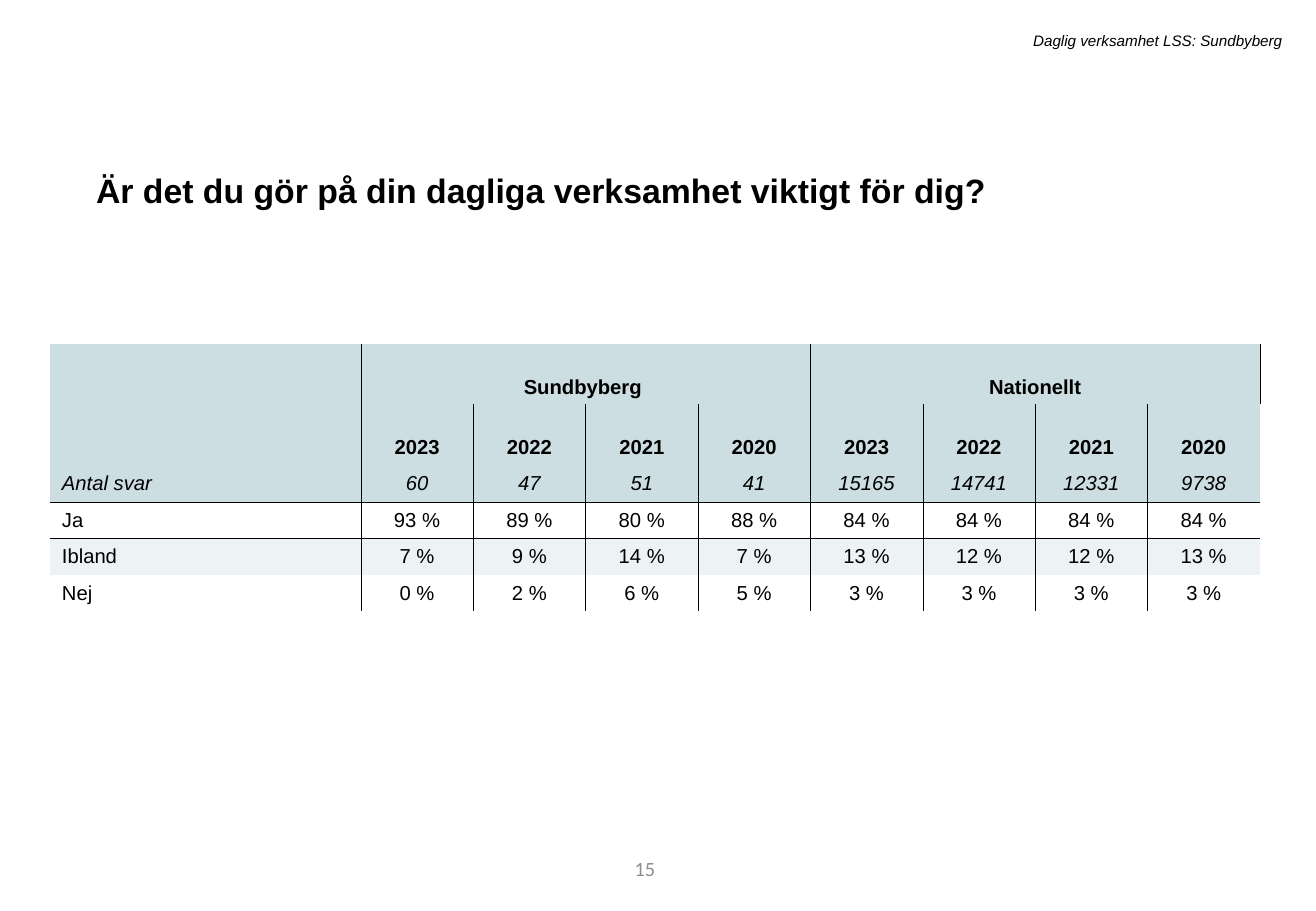
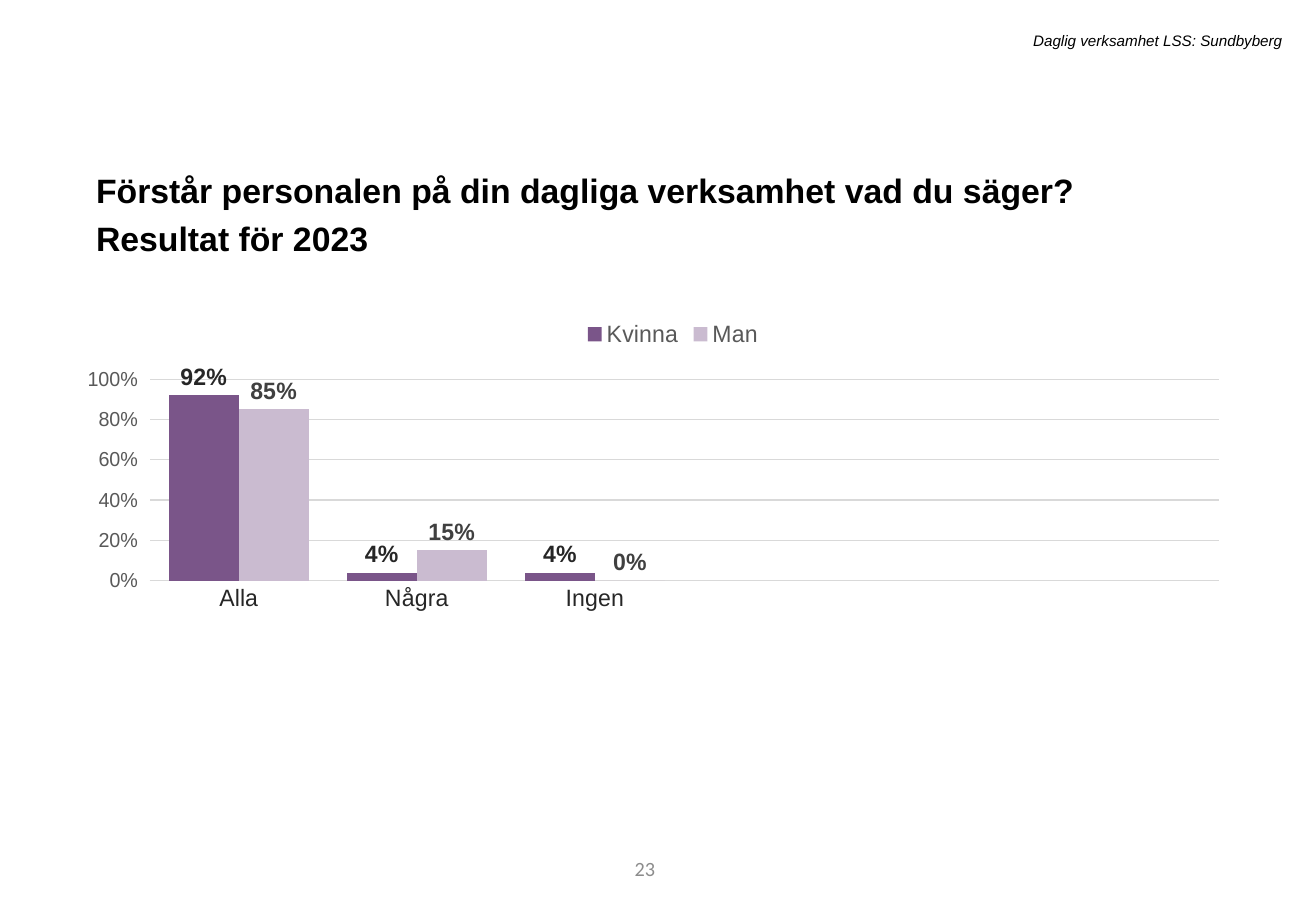
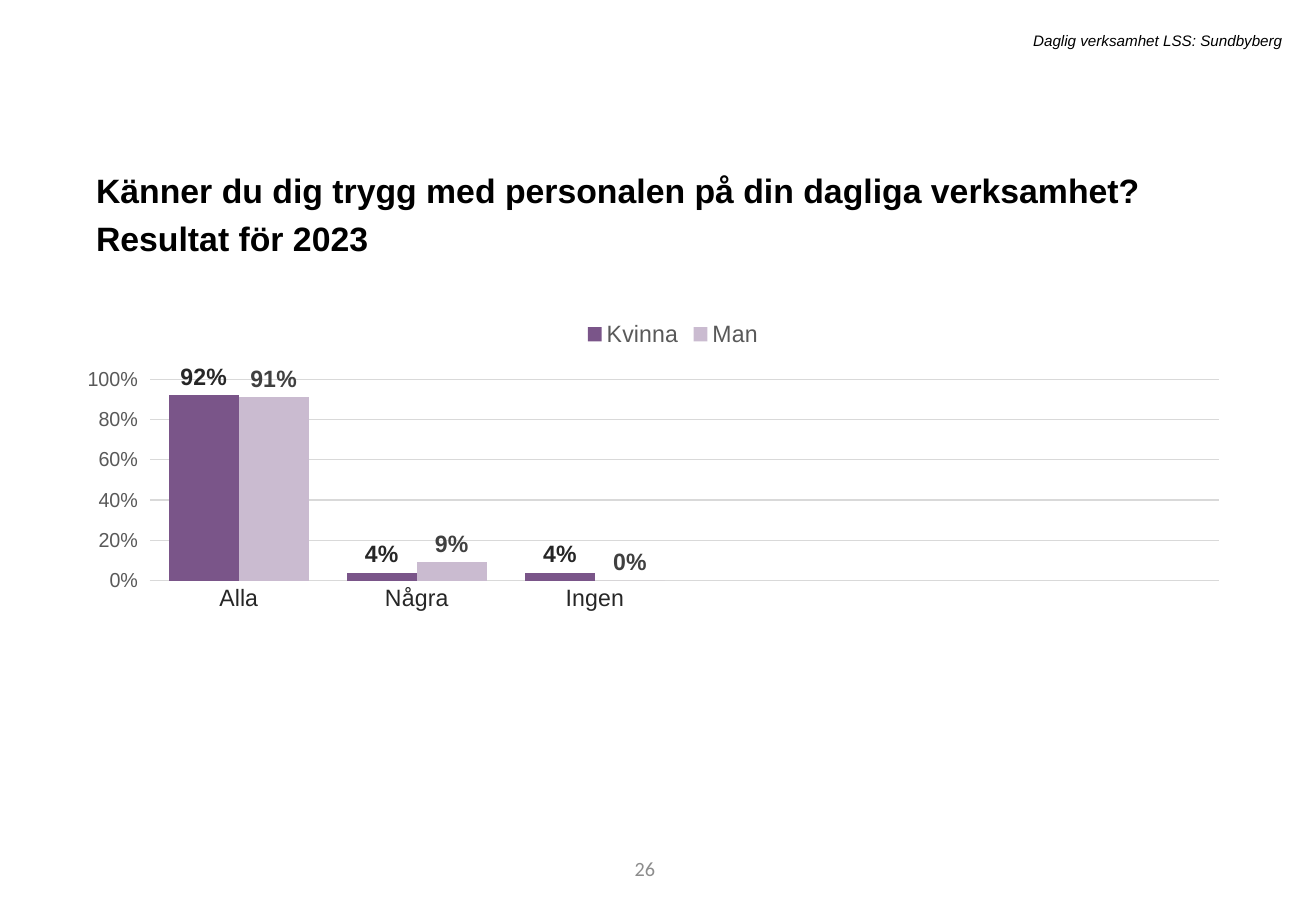
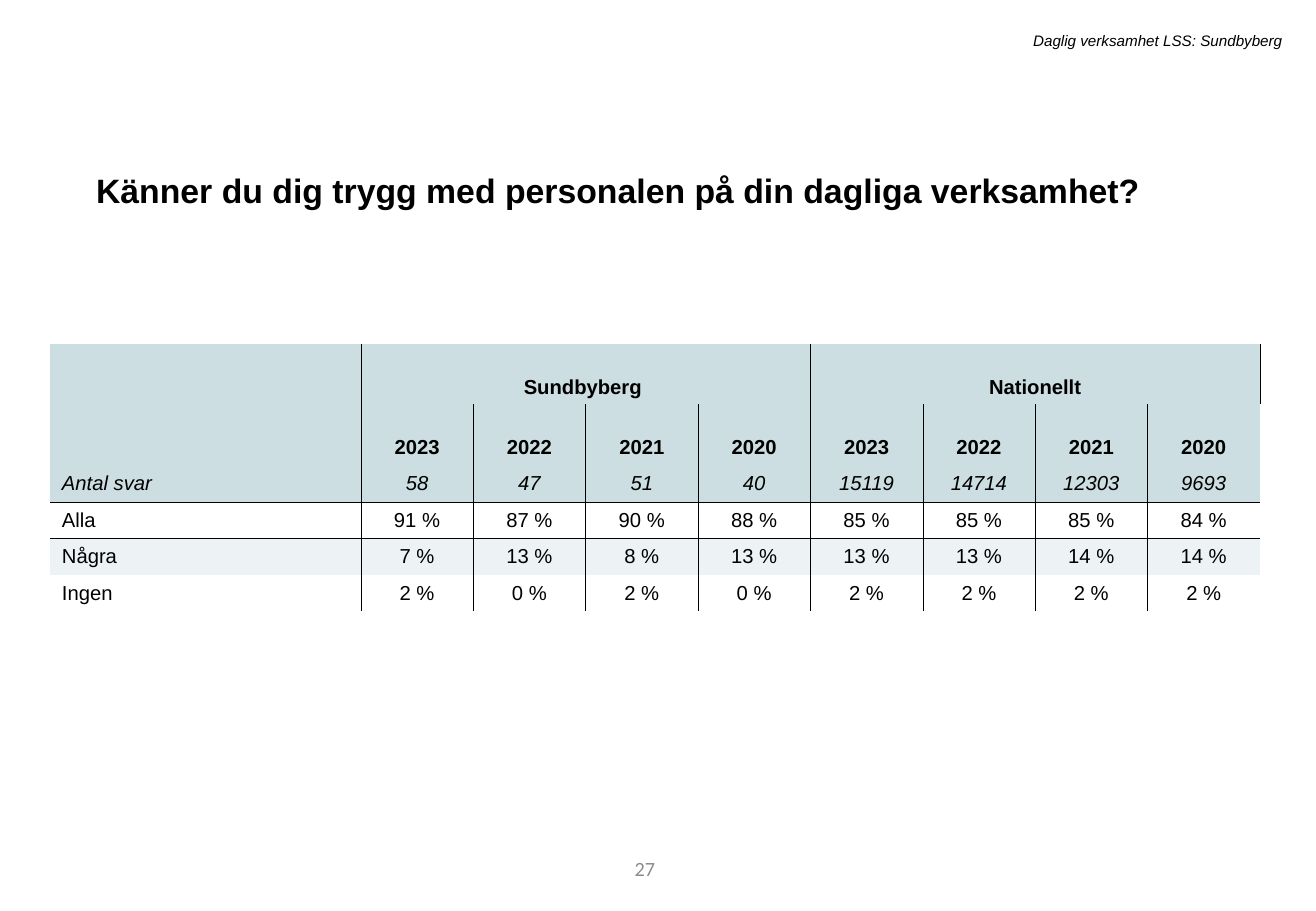
from lxml import etree
from pptx import Presentation
from pptx import util as u
from pptx.chart.data import CategoryChartData
from pptx.dml.color import RGBColor
from pptx.enum import chart as charts, text
from pptx.oxml import parse_xml
from pptx.oxml.ns import nsdecls, qn

COLOURS = {
    "ink": "000000",
    "number": "8C8C8C",
    "head": "CCDEE1",
    "stripe": "EDF3F4",
    "women": "7A5589",
    "men": "CABBD0",
    "grid": "D9D9D9",
    "category": "262626",
    "axis": "595959",
    "men_label": "404040",
}
FONT = "Arial"
HEADER = "Daglig verksamhet LSS: Sundbyberg"
PLAIN_TABLE = "{2D5ABB26-0587-4C30-8999-92F81FD0307C}"
GROUPS = ["Sundbyberg ", "Nationellt"]
YEARS = ["2023", "2022", "2021", "2020"]
ROW_HEIGHTS = [0.5, 0.5, 0.3, 0.3, 0.3, 0.3]
LABEL_WIDTH, VALUE_WIDTH = 2.56, 0.925
PLOT_AREA = {"x": 0.03, "y": 0.15, "w": 0.96, "h": 0.42}
SERIES = [("Kvinna", "women", "category"), ("Man", "men", "men_label")]


def colour(name):
    return RGBColor.from_string(COLOURS[name])


def style(font, size, ink="ink", name=FONT, bold=False, italic=False):
    font.size, font.name = u.Pt(size), name
    font.bold, font.italic = bold, italic
    font.color.rgb = colour(ink)


def write(frame, content, align="LEFT", anchor="TOP", spacing=None, before=None, **font):
    frame.word_wrap = True
    frame.vertical_anchor = getattr(text.MSO_ANCHOR, anchor)
    para = frame.paragraphs[0]
    para.alignment = getattr(text.PP_ALIGN, align)
    if spacing:
        para.line_spacing = spacing
    if before:
        para.space_before = u.Pt(before)
    span = para.add_run()
    span.text = content
    style(span.font, **font)


def place(box, left, top, width, height):
    box.left, box.top = u.Inches(left), u.Inches(top)
    box.width, box.height = u.Inches(width), u.Inches(height)


def add_text(page, area, content, **form):
    box = page.shapes.add_textbox(*map(u.Inches, area))
    write(box.text_frame, content, **form)


def add_page(deck, title, number):
    page = deck.slides.add_slide(deck.slide_layouts[5])
    heading = page.shapes.title
    place(heading, 0.69, 1.28, 9.35, 0.47)
    heading.text_frame.auto_size = text.MSO_AUTO_SIZE.SHAPE_TO_FIT_TEXT
    write(heading.text_frame, title, size=20, bold=True, spacing=1.2, before=10)
    add_text(page, (1.79, 0.21, 8.86, 0.25), HEADER, align="RIGHT", size=9, italic=True)
    add_text(page, (3.05, 6.95, 2.44, 0.4), str(number), align="RIGHT",
             anchor="MIDDLE", size=12, ink="number", name="Calibri")
    return page


def set_borders(cell, sides):
    properties = cell._tc.get_or_add_tcPr()
    for place_in_order, side in enumerate(side for side in "LRTB" if side in sides):
        line = parse_xml(
            f'<a:ln{side} {nsdecls("a")} w="3175"><a:solidFill>'
            f'<a:srgbClr val="{COLOURS["ink"]}"/></a:solidFill></a:ln{side}>')
        properties.insert(place_in_order, line)


def cell_borders(row, column, last):
    if row == 0:
        return {0: "R", 1: "LR", 5: "LR"}.get(column, "")
    sides = ("L" if column > 0 else "") + ("R" if column < last else "")
    return sides + {2: "B", 3: "T"}.get(row, "")


def add_result_table(page, counts, answers):
    group_row = [""] + [name for group in GROUPS for name in [group, "", "", ""]]
    rows = [group_row, [""] + YEARS * 2, ["Antal svar"] + counts]
    rows += [[answer] + [f"{value} %" for value in values] for answer, values in answers]
    last = len(group_row) - 1
    frame = page.shapes.add_table(
        len(rows), last + 1, u.Inches(0.41), u.Inches(2.83),
        u.Inches(LABEL_WIDTH + last * VALUE_WIDTH), u.Inches(sum(ROW_HEIGHTS)))
    table = frame.table
    table._tbl.tblPr.find(qn("a:tableStyleId")).text = PLAIN_TABLE
    table.first_row = table.horz_banding = False
    for index, column in enumerate(table.columns):
        column.width = u.Inches(VALUE_WIDTH if index else LABEL_WIDTH)
    for row, height in enumerate(ROW_HEIGHTS):
        table.rows[row].height = u.Inches(height)
    for start in (1, 5):
        table.cell(0, start).merge(table.cell(0, start + 3))
    for row, values in enumerate(rows):
        fill = "head" if row < 3 else "stripe" if row == 4 else None
        for column, value in enumerate(values):
            cell = table.cell(row, column)
            if fill:
                cell.fill.solid()
                cell.fill.fore_color.rgb = colour(fill)
            else:
                cell.fill.background()
            set_borders(cell, cell_borders(row, column, last))
            if value:
                write(cell.text_frame, str(value), align="CENTER" if column else "LEFT",
                      size=12, bold=row < 2, italic=row == 2)
                cell.vertical_anchor = text.MSO_ANCHOR.BOTTOM if row < 2 else text.MSO_ANCHOR.MIDDLE


def set_plot_area(chart):
    area = chart._chartSpace.chart.plotArea
    for old in area.findall(qn("c:layout")):
        area.remove(old)
    layout = parse_xml(f'<c:layout {nsdecls("c")}><c:manualLayout/></c:layout>')
    settings = [("layoutTarget", "inner"), ("xMode", "edge"), ("yMode", "edge")]
    for tag, value in settings + list(PLOT_AREA.items()):
        etree.SubElement(layout[0], qn(f"c:{tag}")).set("val", str(value))
    area.insert(0, layout)


def format_axes(chart):
    categories, values = chart.category_axis, chart.value_axis
    categories.major_tick_mark = charts.XL_TICK_MARK.NONE
    categories.format.line.color.rgb = colour("grid")
    categories.format.line.width = u.Pt(0.75)
    style(categories.tick_labels.font, 14, "category")
    values.minimum_scale, values.maximum_scale, values.major_unit = 0, 1, 0.2
    values.major_tick_mark = charts.XL_TICK_MARK.OUTSIDE
    values.format.line.fill.background()
    values.major_gridlines.format.line.color.rgb = colour("grid")
    values.major_gridlines.format.line.width = u.Pt(0.75)
    values.tick_labels.number_format = "0%"
    values.tick_labels.number_format_is_linked = False
    style(values.tick_labels.font, 12, "axis")


def add_gender_chart(page, answers, *results):
    data = CategoryChartData(number_format="0%")
    data.categories = answers + [""] * 3
    for (name, _, _), values in zip(SERIES, results):
        data.add_series(name, values + [None] * 3)
    frame = page.shapes.add_chart(
        charts.XL_CHART_TYPE.COLUMN_CLUSTERED, *map(u.Inches, (0.72, 2.53, 9.4, 3.95)), data)
    chart = frame.chart
    chart.has_title = False
    style(chart.font, 10)
    chart.has_legend = True
    chart.legend.position = charts.XL_LEGEND_POSITION.TOP
    chart.legend.include_in_layout = False
    style(chart.legend.font, 14, "axis")
    format_axes(chart)
    set_plot_area(chart)
    plot = chart.plots[0]
    plot.gap_width, plot.overlap, plot.vary_by_categories = 55, 0, False
    for series, (_, fill, ink) in zip(plot.series, SERIES):
        series.format.fill.solid()
        series.format.fill.fore_color.rgb = colour(fill)
        labels = series.data_labels
        labels.show_value = True
        labels.position = charts.XL_LABEL_POSITION.OUTSIDE_END
        labels.number_format, labels.number_format_is_linked = "0%", False
        style(labels.font, 14, ink, bold=True)


def main():
    deck = Presentation()
    deck.slide_width, deck.slide_height = u.Inches(10.83), u.Inches(7.5)
    amounts = ["Alla", "Några", "Ingen"]
    understood = "Förstår personalen på din dagliga verksamhet vad du säger?"
    safe = "Känner du dig trygg med personalen på din dagliga verksamhet?"

    page = add_page(deck, "Är det du gör på din dagliga verksamhet viktigt för dig?", 15)
    add_result_table(page, [60, 47, 51, 41, 15165, 14741, 12331, 9738], [
        ("Ja", [93, 89, 80, 88, 84, 84, 84, 84]),
        ("Ibland", [7, 9, 14, 7, 13, 12, 12, 13]),
        ("Nej", [0, 2, 6, 5, 3, 3, 3, 3]),
    ])

    page = add_page(deck, f"{understood} Resultat för 2023", 23)
    add_gender_chart(page, amounts, [0.92, 0.04, 0.04], [0.85, 0.15, 0])

    page = add_page(deck, f"{safe} Resultat för 2023", 26)
    add_gender_chart(page, amounts, [0.92, 0.04, 0.04], [0.91, 0.09, 0])

    page = add_page(deck, safe, 27)
    add_result_table(page, [58, 47, 51, 40, 15119, 14714, 12303, 9693], [
        ("Alla", [91, 87, 90, 88, 85, 85, 85, 84]),
        ("Några", [7, 13, 8, 13, 13, 13, 14, 14]),
        ("Ingen", [2, 0, 2, 0, 2, 2, 2, 2]),
    ])
    deck.save("out.pptx")


if __name__ == "__main__":
    main()
